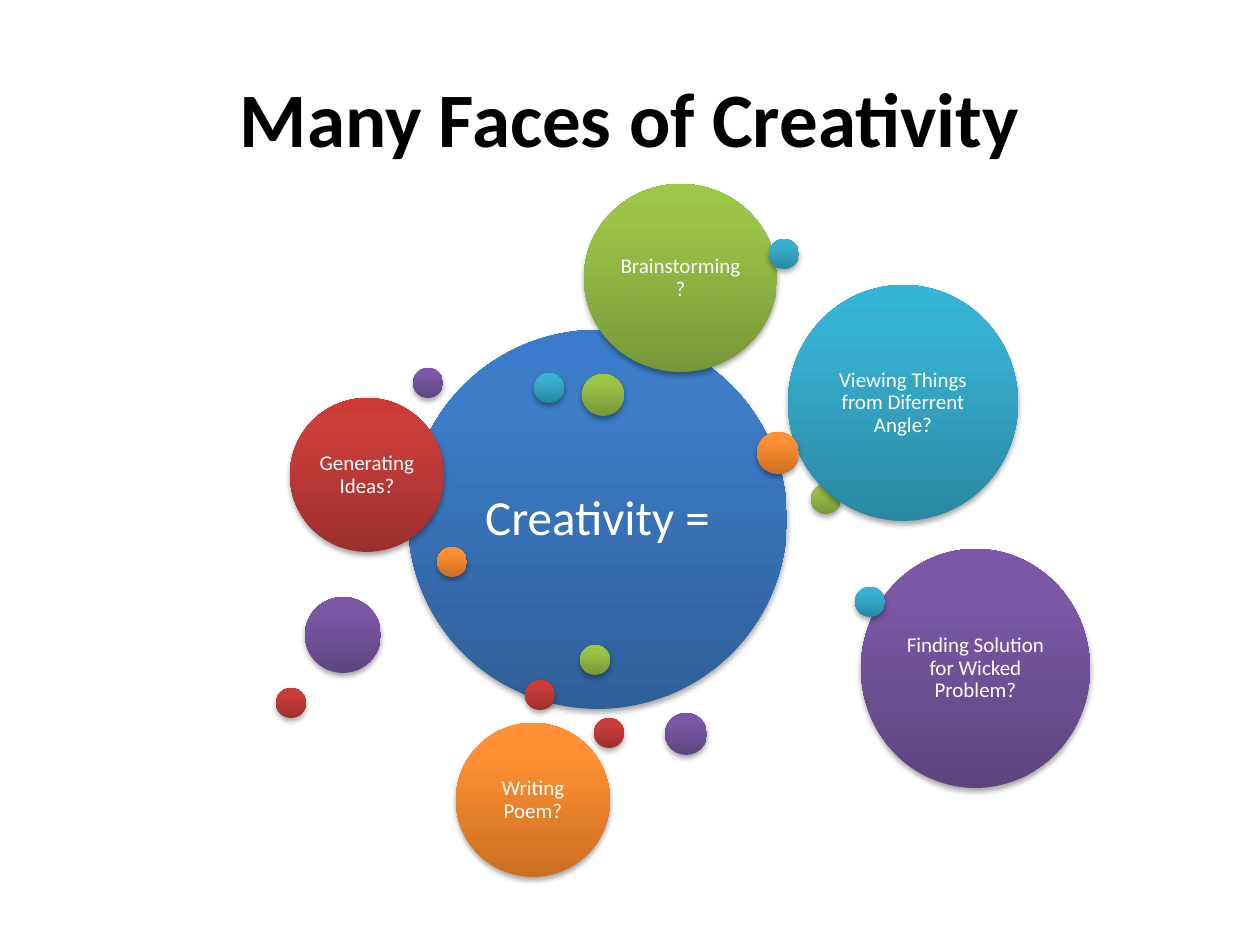
from lxml.etree import fromstring
from pptx import Presentation
from pptx.dml.color import RGBColor
from pptx.enum.shapes import MSO_SHAPE
from pptx.enum.text import MSO_ANCHOR, PP_ALIGN
from pptx.util import Pt

SCALE = 914400 / 126  # EMU per px
FONT = "Calibri"
INK = {"black": "000000", "white": "FFFFFF"}
# Gradient stops at 0, 80 and 100 percent, from bottom to top
HUES = {
    "blue": ("2F5F99", "3D7CC7", "3A7CCB"),
    "red": ("9C2F2D", "CB3E3A", "CE3B37"),
    "green": ("779737", "9BC348", "9DC746"),
    "purple": ("5F4480", "7B58A6", "7C57A8"),
    "teal": ("2A88A2", "37B1D2", "34B4D6"),
    "orange": ("CC6E20", "FF9034", "FF9136"),
}
DOT, BEAD, BALL, DISC = 30, 42, 76, 154  # circle diameters

# Back to front: left, top, width, height, hue, label
CIRCLES = [
    (408, 330, 379, 379, "blue", "Creativity ="),
    (525, 680, DOT, DOT, "red", ""),
    (811, 484, DOT, DOT, "green", ""),
    (665, 713, BEAD, BEAD, "purple", ""),
    (534, 373, DOT, DOT, "teal", ""),
    (437, 547, DOT, DOT, "orange", ""),
    (290, 398, DISC, DISC, "red", "Generating Ideas?"),
    (582, 374, BEAD, BEAD, "green", ""),
    (305, 597, BALL, BALL, "purple", ""),
    (788, 285, 230, 236, "teal", "Viewing Things from Diferrent Angle?"),
    (757, 432, BEAD, BEAD, "orange", ""),
    (276, 688, DOT, DOT, "red", ""),
    (580, 645, DOT, DOT, "green", ""),
    (861, 549, 229, 239, "purple", "Finding Solution for Wicked Problem?"),
    (855, 587, DOT, DOT, "teal", ""),
    (456, 723, DISC, DISC, "orange", "Writing Poem?"),
    (594, 718, DOT, DOT, "red", ""),
    (584, 184, 193, 188, "green", "Brainstorming?"),
    (413, 368, DOT, DOT, "purple", ""),
    (769, 239, DOT, DOT, "teal", ""),
]

LOOK = """<a:look xmlns:a="http://schemas.openxmlformats.org/drawingml/2006/main">
<a:gradFill rotWithShape="1"><a:gsLst>{stops}</a:gsLst>
<a:lin ang="16200000" scaled="0"/></a:gradFill>
<a:ln><a:noFill/></a:ln>
<a:effectLst><a:outerShdw blurRad="40000" dist="23000" dir="5400000" rotWithShape="0">
<a:srgbClr val="000000"><a:alpha val="35000"/></a:srgbClr></a:outerShdw></a:effectLst>
</a:look>"""
STOP = '<a:gs pos="{}"><a:srgbClr val="{}"/></a:gs>'


def px(n):
    return round(n * SCALE)


def place(shape, *box):
    shape.left, shape.top, shape.width, shape.height = map(px, box)


def write(shape, text, size=12, color="white", bold=False, pad=6, lead=0.9):
    frame = shape.text_frame
    frame.word_wrap = True
    frame.vertical_anchor = MSO_ANCHOR.MIDDLE
    frame.margin_left = frame.margin_right = px(pad)
    frame.margin_top = frame.margin_bottom = px(pad)
    para = frame.paragraphs[0]
    para.alignment = PP_ALIGN.CENTER
    para.line_spacing = lead
    run = para.add_run()
    run.text = text
    run.font.name = FONT
    run.font.size = Pt(size)
    run.font.bold = bold
    run.font.color.rgb = RGBColor.from_string(INK[color])


def paint(shape, hue):
    """Give a shape its gradient, no outline and a soft shadow."""
    stops = "".join(STOP.format(pos, color)
                    for pos, color in zip((0, 80000, 100000), HUES[hue]))
    for part in list(fromstring(LOOK.format(stops=stops))):
        shape._element.spPr.append(part)


def circle(slide, box, hue):
    shape = slide.shapes.add_shape(MSO_SHAPE.OVAL, *map(px, box))
    paint(shape, hue)
    return shape


def main():
    deck = Presentation()
    deck.slide_width, deck.slide_height = px(1260), px(945)
    slide = deck.slides.add_slide(deck.slide_layouts[5])

    # Title
    title = slide.shapes.title
    place(title, 63, 38, 1134, 158)
    write(title, "Many Faces of Creativity", size=44, color="black",
          bold=True, lead=1.0)

    # Circles, with the hub in larger type
    for *box, hue, label in CIRCLES:
        shape = circle(slide, box, hue)
        if hue == "blue":
            write(shape, label, size=28, pad=15)
        elif label:
            write(shape, label)

    deck.save("out.pptx")


if __name__ == "__main__":
    main()
